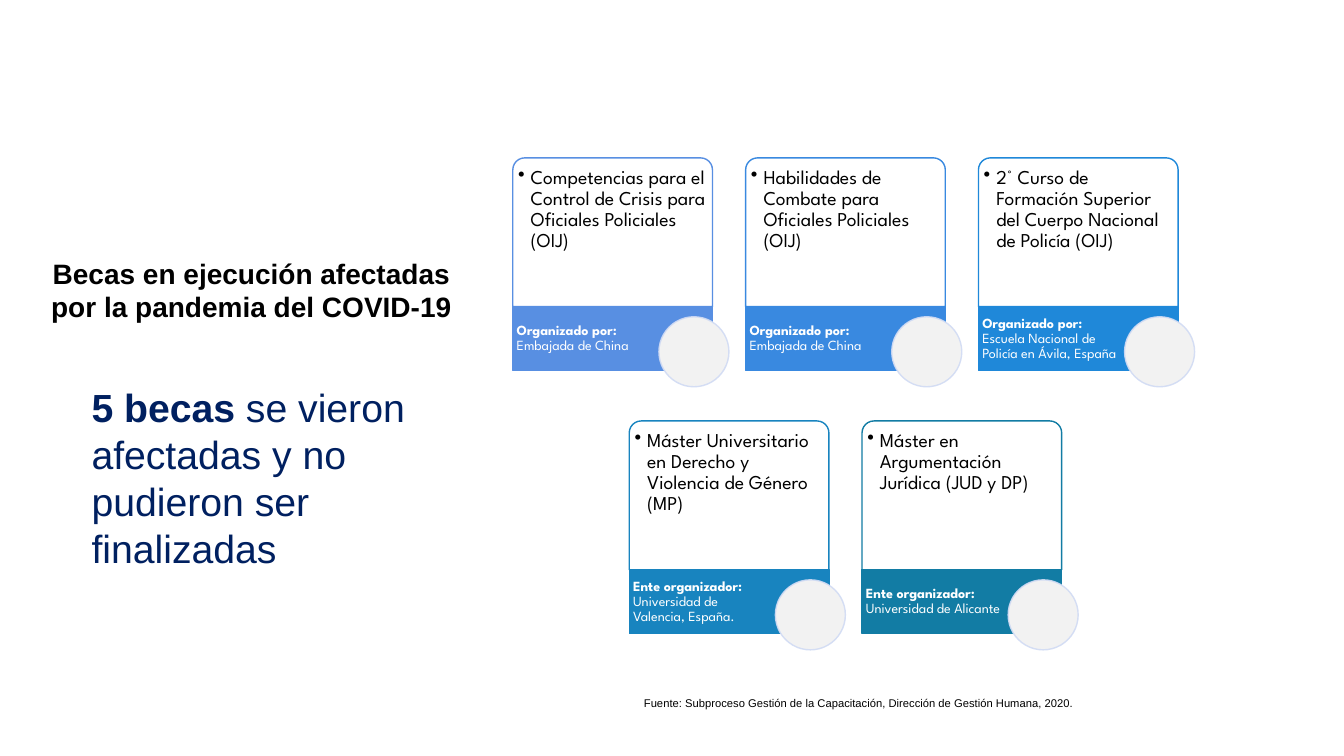
import pptx
import pptx.util
import pptx.dml.color
import pptx.enum.shapes
import pptx.enum.text
import pptx.oxml
import pptx.oxml.ns

Pt = pptx.util.Pt
Shape = pptx.enum.shapes.MSO_SHAPE
Align = pptx.enum.text.PP_ALIGN
Anchor = pptx.enum.text.MSO_ANCHOR

CARD_W = 142.6
CARD_H = 106.3
BAR_H = 45.6
STEP = 166.3
MID_X = 603.9
DISC = 50

ROWS = [
    (112.8, "Organizado por: ", [
        ("Competencias para el Control de Crisis para Oficiales Policiales (OIJ)",
         "Embajada de China", "588FE2"),
        ("Habilidades de Combate para Oficiales Policiales (OIJ)",
         "Embajada de China", "3989E0"),
        ("2° Curso de Formación Superior del Cuerpo Nacional de Policía (OIJ)",
         "Escuela Nacional de Policía en Ávila, España", "1F88D9"),
    ]),
    (300.7, "Ente organizador: ", [
        ("Máster Universitario en Derecho y Violencia de Género (MP)",
         "Universidad de Valencia, España.", "1884BF"),
        ("Máster en Argumentación Jurídica (JUD y DP)",
         "Universidad de Alicante", "127CA4"),
    ]),
]


def color(code):
    return pptx.dml.color.RGBColor.from_string(code)


def fade(fill, share):
    tint = fill._xPr.find(".//" + pptx.oxml.ns.qn("a:srgbClr"))
    alpha = pptx.oxml.parse_xml(
        f'<a:alpha {pptx.oxml.ns.nsdecls("a")} val="{share * 1000}"/>')
    tint.append(alpha)


def write(box, runs, size=14, font="Arial", ink="000000", align=Align.LEFT,
          anchor=Anchor.TOP, inset=(7.2, 3.6, 7.2, 3.6), space=None,
          left=0, first=0, bullet=None):
    frame = box.text_frame
    frame.word_wrap = True
    frame.auto_size = pptx.enum.text.MSO_AUTO_SIZE.NONE
    frame.vertical_anchor = anchor
    (frame.margin_left, frame.margin_top,
     frame.margin_right, frame.margin_bottom) = map(Pt, inset)
    para = frame.paragraphs[0]
    para.alignment = align
    para.line_spacing = space
    props = para._p.get_or_add_pPr()
    props.set("marL", str(Pt(left)))
    props.set("indent", str(Pt(first)))
    if bullet:
        props.append(pptx.oxml.parse_xml(
            f'<a:buChar {pptx.oxml.ns.nsdecls("a")} char="{bullet}"/>'))
    for text, bold in runs:
        for i, line in enumerate(text.split("\n")):
            if i:
                para.add_line_break()
            run = para.add_run()
            run.text = line
            run.font.name = font
            run.font.size = Pt(size)
            run.font.bold = bold
            run.font.color.rgb = color(ink)


def label(slide, x, y, w, h, runs, **style):
    box = slide.shapes.add_textbox(Pt(x), Pt(y), Pt(w), Pt(h))
    write(box, runs, **style)


def block(slide, kind, x, y, w, h, fill, edge):
    shape = slide.shapes.add_shape(kind, Pt(x), Pt(y), Pt(w), Pt(h))
    shape.shadow.inherit = False
    shape.fill.solid()
    shape.fill.fore_color.rgb = color(fill)
    shape.line.color.rgb = color(edge)
    shape.line.width = Pt(1)
    return shape


def card(slide, x, y, course, lead, host, tone):
    panel = block(slide, Shape.ROUND_2_SAME_RECTANGLE, x, y, CARD_W, CARD_H,
                  "FFFFFF", tone)
    panel.adjustments[0] = 0.08
    panel.adjustments[1] = 0
    fade(panel.fill, 90)
    label(slide, x + 2.4, y + 2.4, CARD_W - 4.8, CARD_H - 2.4,
          [(course, False)], font="League Spartan",
          inset=(1.4, 4.2, 1.4, 1.4), space=0.9, left=9, first=-9, bullet="•")
    base = y + CARD_H
    block(slide, Shape.RECTANGLE, x, base, CARD_W, BAR_H, tone, tone)
    label(slide, x, base, 100.4, BAR_H, [(lead, True), (host, False)],
          size=10, font="League Spartan", ink="FFFFFF", anchor=Anchor.MIDDLE,
          inset=(2.8, 0, 0.9, 0), space=0.9)
    disc = block(slide, Shape.OVAL, x + 104.4, base + 7.2, DISC, DISC,
                 "F2F2F2", "D1DBF4")
    fade(disc.line.fill, 90)


def main():
    deck = pptx.Presentation()
    deck.slide_width = Pt(960)
    deck.slide_height = Pt(540)
    slide = deck.slides.add_slide(deck.slide_layouts.get_by_name("Title Only"))

    title = slide.shapes.title
    title.left, title.top = Pt(22.3), Pt(179.3)
    title.width, title.height = Pt(314.6), Pt(90.7)
    write(title, [("Becas en ejecución afectadas\npor la pandemia del COVID-19",
                   True)], size=20, align=Align.CENTER)

    label(slide, 58.3, 270, 249.8, 143.3,
          [("5 becas", True),
           (" se vieron afectadas y no pudieron ser finalizadas", False)],
          size=28, ink="002060")
    label(slide, 382.3, 493.9, 480.2, 17.3,
          [("Fuente: Subproceso Gestión de la Capacitación, "
            "Dirección de Gestión Humana, 2020.", False)],
          size=8, left=35.3, first=35.3)

    for top, lead, cards in ROWS:
        start = MID_X - (CARD_W + STEP * (len(cards) - 1)) / 2
        for i, (course, host, tone) in enumerate(cards):
            card(slide, start + i * STEP, top, course, lead, host, tone)

    deck.save("out.pptx")


if __name__ == "__main__":
    main()
